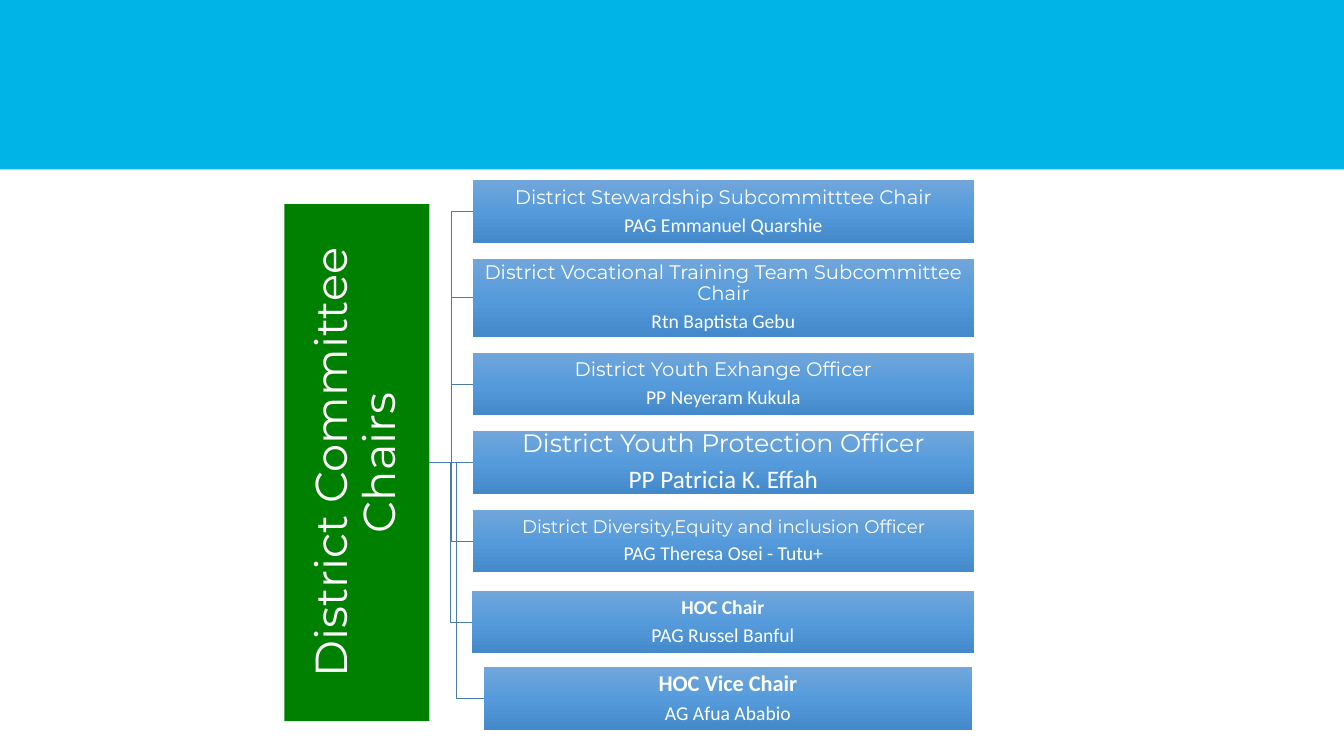
from copy import deepcopy

from pptx import Presentation
from pptx.dml.color import RGBColor
from pptx.enum.shapes import MSO_CONNECTOR, MSO_SHAPE
from pptx.enum.text import MSO_ANCHOR, PP_ALIGN
from pptx.oxml.ns import qn
from pptx.oxml.xmlchemy import OxmlElement
from pptx.util import Inches, Pt

SKY = RGBColor(0x01, 0xB4, 0xE7)
GREEN = RGBColor(0x00, 0x80, 0x00)
WHITE = RGBColor(0xFF, 0xFF, 0xFF)
BRANCH = RGBColor(0x49, 0x7C, 0xAB)
BOX_GRADIENT = (
    (0, RGBColor(0x71, 0xA6, 0xDB)),
    (0.5, RGBColor(0x55, 0x9B, 0xDB)),
    (1, RGBColor(0x44, 0x8A, 0xCA)),
)

ROLE = dict(size=14, font="Montserrat")
PERSON = dict(size=14, font="Calibri")
HOC_ROLE = dict(PERSON, bold=True)
STANDARD = dict(indent=0, width=4.97, height=0.62, gap=0.16)

# role, role format, person, person format, box layout
CHAIRS = [
    ("District Stewardship Subcommitttee Chair", ROLE,
     "PAG Emmanuel Quarshie", PERSON, STANDARD),
    ("District Vocational Training Team Subcommittee Chair", ROLE,
     "Rtn Baptista Gebu", PERSON, dict(STANDARD, height=0.77)),
    ("District Youth Exhange Officer", ROLE,
     "PP Neyeram Kukula", PERSON, STANDARD),
    ("District Youth Protection Officer", dict(ROLE, size=18),
     "PP Patricia K. Effah", dict(PERSON, size=18), STANDARD),
    ("District Diversity,Equity and inclusion Officer", dict(ROLE, size=13),
     "PAG Theresa Osei - Tutu+", PERSON, dict(STANDARD, gap=0.18)),
    ("HOC Chair", HOC_ROLE,
     "PAG Russel Banful", PERSON, dict(STANDARD, indent=-0.01, width=4.98, gap=0.14)),
    ("HOC Vice Chair", dict(HOC_ROLE, size=16),
     "AG Afua Ababio", PERSON, dict(STANDARD, indent=0.11, width=4.84)),
]


def add_rect(slide, left, top, width, height, color=None, inset=0.01):
    rect = slide.shapes.add_shape(
        MSO_SHAPE.RECTANGLE, Inches(left), Inches(top), Inches(width), Inches(height))
    rect.shadow.inherit = False
    rect.line.fill.background()
    if color is not None:
        rect.fill.solid()
        rect.fill.fore_color.rgb = color
    frame = rect.text_frame
    frame.word_wrap = True
    frame.vertical_anchor = MSO_ANCHOR.MIDDLE
    frame.margin_left = frame.margin_right = Inches(inset)
    frame.margin_top = frame.margin_bottom = Inches(inset)
    return rect


def write(paragraph, text, size, font, bold=False):
    paragraph.alignment = PP_ALIGN.CENTER
    paragraph.line_spacing = 0.9
    paragraph.space_after = Pt(round(size * 0.35, 1))
    run = paragraph.add_run()
    run.text = text
    run.font.size = Pt(size)
    run.font.name = font
    run.font.bold = bold
    run.font.color.rgb = WHITE


def shade(rect):
    """Fill the rectangle with the three-stop gradient, top to bottom."""
    rect.fill.gradient()
    rect.fill.gradient_angle = 270
    stop_list = rect._element.spPr.find(".//" + qn("a:gsLst"))
    stop_list.append(deepcopy(stop_list[0]))
    for stop, (position, color) in zip(rect.fill.gradient_stops, BOX_GRADIENT):
        stop.position = position
        stop.color.rgb = color


def add_branch(slide, start_x, start_y, box):
    """Join the title's right side to the middle of a box's left side."""
    end_y = box.top + box.height // 2
    level = abs(end_y - start_y) < Inches(0.01)
    kind = MSO_CONNECTOR.STRAIGHT if level else MSO_CONNECTOR.ELBOW
    branch = slide.shapes.add_connector(kind, start_x, start_y, box.left, end_y)
    branch.end_connect(box, 1)
    branch.line.color.rgb = BRANCH
    branch.line.width = Pt(0.5)
    branch._element.spPr.append(OxmlElement("a:effectLst"))


def add_title(slide, left, top, width, height):
    """Place the title bar, turned so that its text reads upwards."""
    title = add_rect(slide, left + (width - height) / 2, top + (height - width) / 2,
                     height, width, GREEN, inset=0.02)
    title.rotation = 270
    write(title.text_frame.paragraphs[0], "District Committee Chairs", 32, "Montserrat")


def add_chair(slide, left, top, role, role_format, person, person_format, layout):
    box = add_rect(slide, left + layout["indent"], top, layout["width"], layout["height"])
    shade(box)
    write(box.text_frame.paragraphs[0], role, **role_format)
    write(box.text_frame.add_paragraph(), person, **person_format)
    return box


def add_committee(slide, left, top):
    title_top, title_width, title_height = top + 0.235, 1.44, 5.13
    add_title(slide, left, title_top, title_width, title_height)
    start_x = Inches(left + title_width)
    start_y = Inches(title_top + title_height / 2)
    box_top = top
    for chair in CHAIRS:
        layout = chair[-1]
        box = add_chair(slide, left + 1.87, box_top, *chair)
        add_branch(slide, start_x, start_y, box)
        box_top += layout["height"] + layout["gap"]


def main():
    prs = Presentation()
    prs.slide_width, prs.slide_height = Inches(13.33), Inches(7.5)
    slide = prs.slides.add_slide(prs.slide_layouts[6])
    add_rect(slide, 0, 0, 13.33, 1.68, SKY)
    add_committee(slide, 2.82, 1.79)
    prs.save("out.pptx")


if __name__ == "__main__":
    main()
